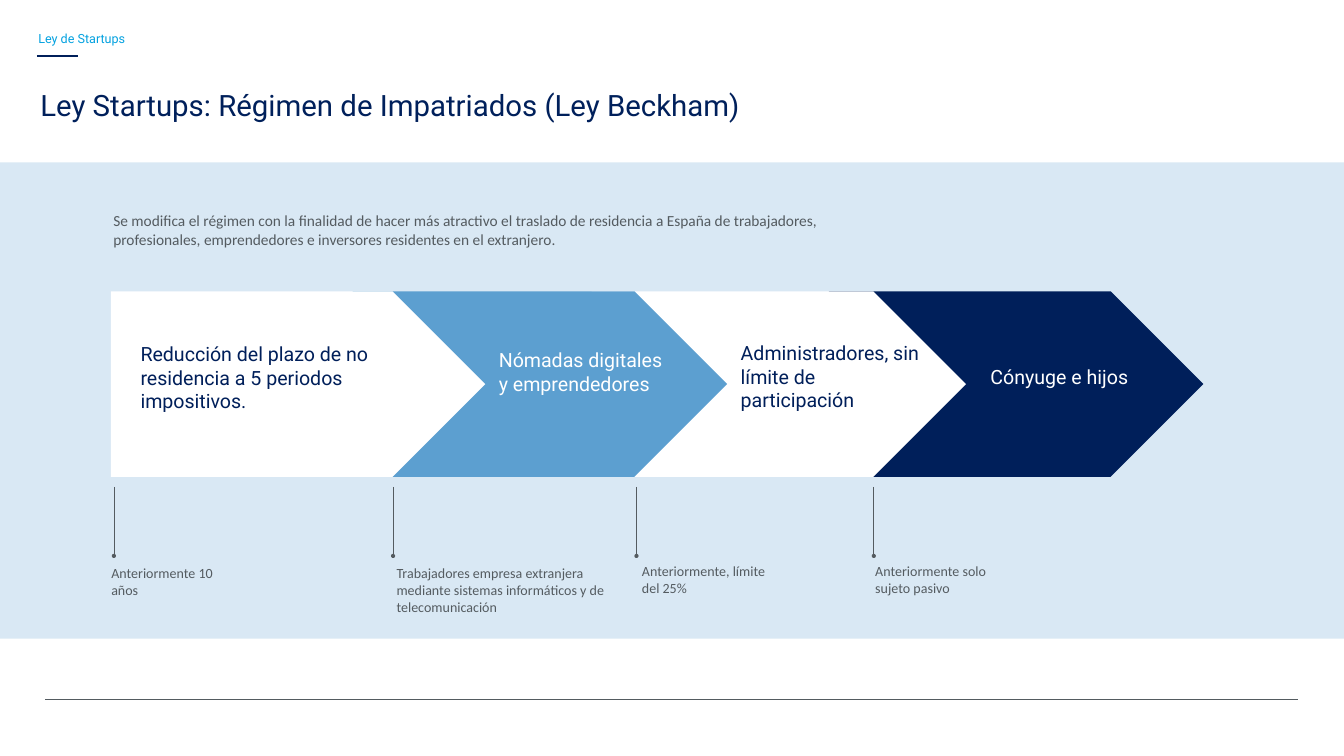
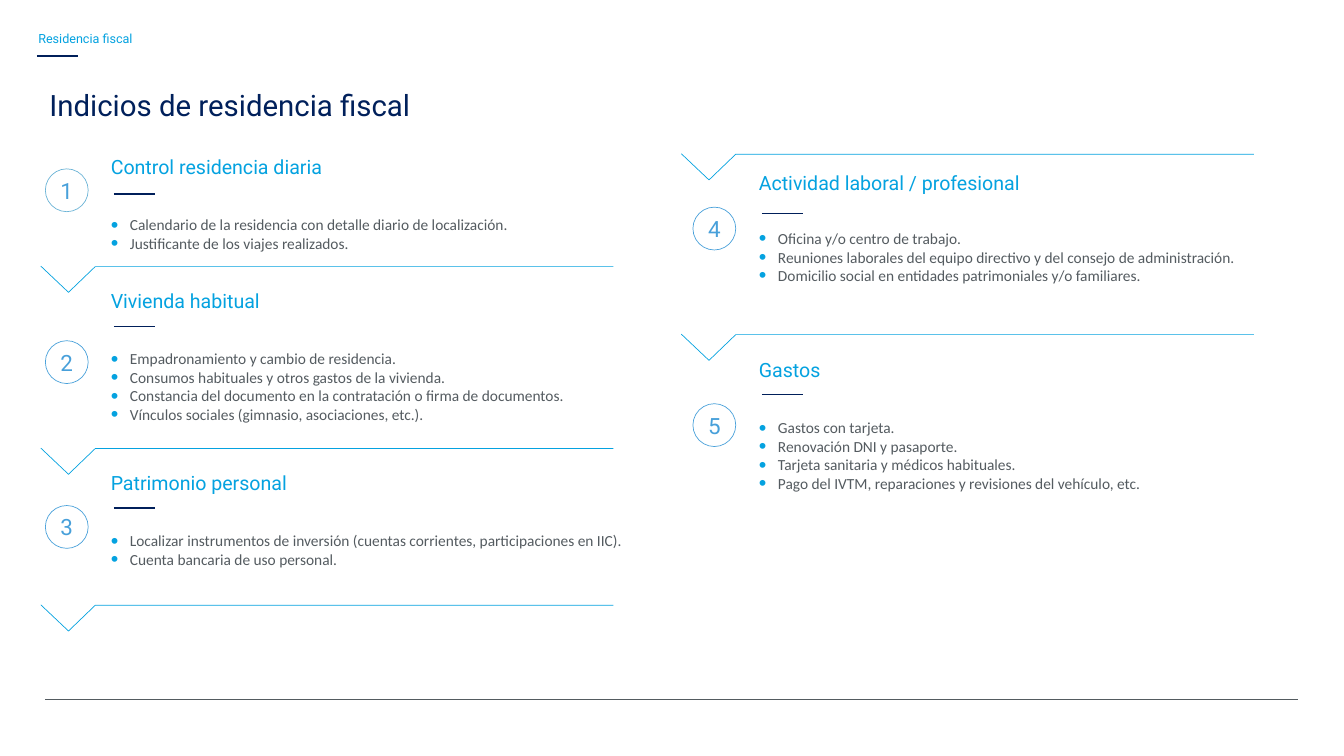
from typing import NamedTuple

from lxml.etree import SubElement
from pptx import Presentation
from pptx.dml.color import RGBColor
from pptx.enum.shapes import MSO_CONNECTOR, MSO_SHAPE
from pptx.enum.text import MSO_ANCHOR, MSO_AUTO_SIZE, PP_ALIGN
from pptx.oxml.ns import qn
from pptx.shapes.autoshape import Shape
from pptx.slide import Slide
from pptx.text.text import TextFrame
from pptx.util import Inches, Pt

WHITE = RGBColor(0xFF, 0xFF, 0xFF)
NAVY = RGBColor(0x00, 0x1F, 0x5A)
TITLE = RGBColor(0x00, 0x20, 0x5B)
BLUE = RGBColor(0x5C, 0x9F, 0xD0)
CYAN = RGBColor(0x04, 0xA2, 0xE0)
RING = RGBColor(0x48, 0xA0, 0xDA)
PALE = RGBColor(0x6A, 0xB3, 0xD6)
GREY = RGBColor(0x54, 0x5B, 0x60)

HEAD = "Roboto"
BODY = "Calibri"
INDENT = Inches(0.38)


class Box(NamedTuple):
    left: float
    top: float
    width: float
    height: float


class Step(NamedTuple):
    left: float
    fill: RGBColor
    color: RGBColor
    label: str
    place: Box
    stem: float
    note: str
    spot: Box
    align: PP_ALIGN = PP_ALIGN.LEFT


class Topic(NamedTuple):
    mark: str
    left: float
    ring_top: float
    place: Box
    rule: float
    title: str
    points: tuple[str, ...]
    gap: int = 53
    ring: RGBColor = RING


STEPS = [
    Step(2.2, WHITE, NAVY,
         "Reducción del plazo de no residencia a 5 periodos impositivos.",
         Box(2.69, 6.74, 5.82, 1.51), 2.26,
         "Anteriormente 10 años", Box(2.11, 11.16, 2.76, 1.18)),
    Step(7, BLUE, WHITE, "Nómadas digitales y emprendedores",
         Box(9.8, 6.86, 3.63, 1.04), 7.8,
         "Trabajadores empresa extranjera mediante sistemas informáticos "
         "y de telecomunicación", Box(7.77, 11.16, 5.02, 1.11)),
    Step(11.74, WHITE, NAVY, "Administradores, sin límite de participación",
         Box(14.6, 6.72, 3.85, 1.51), 12.63,
         "Anteriormente, límite del 25%", Box(12.64, 11.11, 2.94, 0.77)),
    Step(16.45, NAVY, WHITE, "Cónyuge e hijos",
         Box(18.28, 7.19, 5.48, 0.57), 17.34,
         "Anteriormente solo sujeto pasivo", Box(17.27, 11.11, 2.94, 0.77),
         PP_ALIGN.CENTER),
]

TOPICS = [
    Topic("1", 0.9, 3.35, Box(2.1, 3.02, 9.06, 2.05), 3.85,
          "Control residencia diaria",
          ("Calendario de la residencia con detalle diario de localización.",
           "Justificante de los viajes realizados."), ring=PALE),
    Topic("2", 0.9, 6.76, Box(2.1, 5.68, 10.37, 2.79), 6.48,
          "Vivienda habitual",
          ("Empadronamiento y cambio de residencia.",
           "Consumos habituales y otros gastos de la vivienda.",
           "Constancia del documento en la contratación o firma de documentos.",
           "Vínculos sociales (gimnasio, asociaciones, etc.).")),
    Topic("3", 0.9, 10.03, Box(2.1, 9.29, 11.77, 2.05), 10.08,
          "Patrimonio personal",
          ("Localizar instrumentos de inversión (cuentas corrientes, "
           "participaciones en IIC).",
           "Cuenta bancaria de uso personal.")),
    Topic("4", 13.75, 4.11, Box(14.96, 3.35, 9.92, 2.73), 4.24,
          "Actividad laboral / profesional",
          ("Oficina y/o centro de trabajo.",
           "Reuniones laborales del equipo directivo y del consejo de "
           "administración.",
           "Domicilio social en entidades patrimoniales y/o familiares."),
          gap=49),
    Topic("5", 13.75, 8.01, Box(14.96, 7.05, 8.85, 2.79), 7.83,
          "Gastos",
          ("Gastos con tarjeta.",
           "Renovación DNI y pasaporte.",
           "Tarjeta sanitaria y médicos habituales.",
           "Pago del IVTM, reparaciones y revisiones del vehículo, etc.")),
]

NOTCHES = [(0.81, 5.28), (0.81, 8.89), (0.81, 12), (13.52, 3.05), (13.52, 6.63)]


def lengths(box: Box) -> list[int]:
    return [Inches(side) for side in box]


def write(frame: TextFrame, text: str, *, size: float, color: RGBColor,
          font: str = BODY, align: PP_ALIGN = PP_ALIGN.LEFT,
          pitch: float | None = None, before: float = 0,
          bullet: bool = False) -> None:
    """Fill the empty first paragraph, or add one after the last."""
    para = frame.paragraphs[0] if not frame.text else frame.add_paragraph()
    para.alignment = align
    if pitch:
        para.line_spacing = Pt(pitch)
    if before:
        para.space_before = Pt(before)
    if bullet:
        props = para._p.get_or_add_pPr()
        props.set("marL", str(INDENT))
        props.set("indent", str(-INDENT))
        tint = SubElement(props, qn("a:buClr"))
        SubElement(tint, qn("a:srgbClr"), val=str(CYAN))
        SubElement(props, qn("a:buSzPct"), val="140000")
        SubElement(props, qn("a:buFont"), typeface="Arial")
        SubElement(props, qn("a:buChar"), char="•")
    run = para.add_run()
    run.text = text
    run.font.size = Pt(size)
    run.font.name = font
    run.font.color.rgb = color


def add_frame(slide: Slide, box: Box, wrap: bool = True,
              tight: bool = False) -> TextFrame:
    """Add an empty text box; a tight one has thin margins and centres its line."""
    frame = slide.shapes.add_textbox(*lengths(box)).text_frame
    frame.word_wrap = wrap
    frame.auto_size = MSO_AUTO_SIZE.SHAPE_TO_FIT_TEXT
    if tight:
        trim(frame)
    return frame


def trim(frame: TextFrame) -> None:
    frame.vertical_anchor = MSO_ANCHOR.MIDDLE
    frame.margin_left = frame.margin_right = Inches(0.06)
    frame.margin_top = frame.margin_bottom = Inches(0.06)


def add_form(slide: Slide, kind: MSO_SHAPE, box: Box,
             fill: RGBColor | None = None,
             line: RGBColor | None = None) -> Shape:
    form = slide.shapes.add_shape(kind, *lengths(box))
    form.shadow.inherit = False
    if fill is None:
        form.fill.background()
    else:
        form.fill.solid()
        form.fill.fore_color.rgb = fill
    if line is None:
        form.line.fill.background()
    else:
        form.line.color.rgb = line
        form.line.width = Pt(1)
    return form


def add_line(slide: Slide, start: tuple[float, float], end: tuple[float, float],
             color: RGBColor, width: float = 1, dot: bool = False) -> None:
    line = slide.shapes.add_connector(
        MSO_CONNECTOR.STRAIGHT, *map(Inches, start + end))
    line.line.color.rgb = color
    line.line.width = Pt(width)
    props = line.element.spPr
    if dot:
        SubElement(props.find(qn("a:ln")), qn("a:tailEnd"), type="oval")
    SubElement(props, qn("a:effectLst"))


def add_dash(slide: Slide, left: float, top: float) -> None:
    add_line(slide, (left, top), (left + 0.81, top), NAVY, 2)


def add_notch(slide: Slide, left: float, top: float) -> None:
    """Draw a long divider whose left end dips into a V."""
    pen = slide.shapes.build_freeform(Inches(left), Inches(top))
    turns = [(0.55, 0.52), (1.08, 0.01), (11.36, 0.01)]
    pen.add_line_segments(
        [(Inches(left + x), Inches(top + y)) for x, y in turns], close=False)
    form = pen.convert_to_shape()
    form.shadow.inherit = False
    form.fill.background()
    form.line.color.rgb = CYAN
    form.line.width = Pt(1)


def add_base(deck: Presentation, tag: str, title: str, place: Box) -> Slide:
    """Add a slide with the section tag, the title and the footer rule."""
    slide = deck.slides.add_slide(deck.slide_layouts[6])
    add_line(slide, (0.9, 13.88), (25.76, 13.88), GREY)
    write(add_frame(slide, Box(0.7, 0.34, 2, 0.59), wrap=False, tight=True),
          tag, size=18, color=CYAN, font=HEAD, pitch=40)
    add_dash(slide, 0.73, 1.11)
    write(add_frame(slide, place, wrap=False, tight=True),
          title, size=42, color=TITLE, font=HEAD)
    return slide


def add_topic(slide: Slide, topic: Topic) -> None:
    ring = add_form(slide, MSO_SHAPE.OVAL,
                    Box(topic.left, topic.ring_top, 0.85, 0.85), line=topic.ring)
    trim(ring.text_frame)
    write(ring.text_frame, topic.mark, size=32, color=RING, font=HEAD,
          align=PP_ALIGN.CENTER)
    frame = add_frame(slide, topic.place, wrap=False)
    write(frame, topic.title, size=28, color=CYAN, font=HEAD)
    for rank, point in enumerate(topic.points):
        write(frame, point, size=22, color=GREY, bullet=True,
              before=0 if rank else topic.gap)
    add_dash(slide, topic.place.left + 0.16, topic.rule)


def add_regime(deck: Presentation) -> None:
    slide = add_base(deck, "Ley de Startups",
                     "Ley Startups: Régimen de Impatriados (Ley Beckham)",
                     Box(0.74, 1.67, 14.52, 0.82))
    band = add_form(slide, MSO_SHAPE.RECTANGLE, Box(0, 3.22, 26.67, 9.45), BLUE)
    tint = band.element.spPr.find(qn("a:solidFill"))[0]
    SubElement(tint, qn("a:alpha"), val="23000")
    write(add_frame(slide, Box(2.15, 4.14, 14.2, 1.25)),
          "Se modifica el régimen con la finalidad de hacer más atractivo el "
          "traslado de residencia a España de trabajadores, profesionales, "
          "emprendedores e inversores residentes en el extranjero.",
          size=22, color=GREY)
    for step in reversed(STEPS):
        add_form(slide, MSO_SHAPE.PENTAGON, Box(step.left, 5.78, 7.43, 3.68),
                 step.fill)
    for step in STEPS:
        write(add_frame(slide, step.place), step.label, size=28,
              color=step.color, font=HEAD, align=step.align)
        add_line(slide, (step.stem, 9.66), (step.stem, 11.03), GREY, dot=True)
        write(add_frame(slide, step.spot), step.note, size=20, color=GREY)


def add_signs(deck: Presentation) -> None:
    slide = add_base(deck, "Residencia fiscal", "Indicios de residencia fiscal",
                     Box(0.92, 1.67, 7.54, 0.82))
    for topic in TOPICS:
        add_topic(slide, topic)
    for left, top in NOTCHES:
        add_notch(slide, left, top)


def main() -> None:
    deck = Presentation()
    deck.slide_width = Inches(26.67)
    deck.slide_height = Inches(15)
    add_regime(deck)
    add_signs(deck)
    deck.save("out.pptx")


if __name__ == "__main__":
    main()
